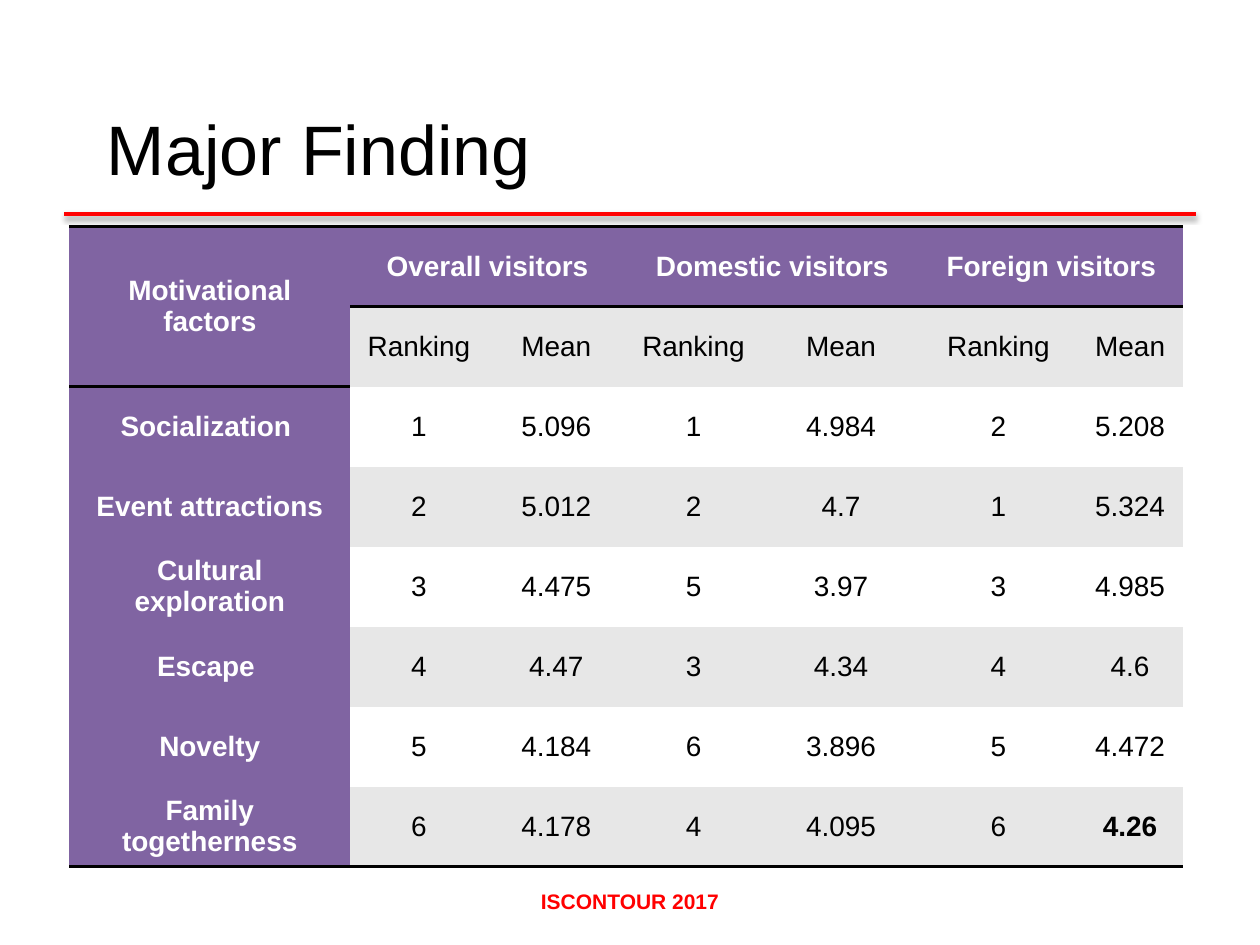
from lxml.etree import SubElement
from pptx import Presentation
from pptx.dml.color import RGBColor
from pptx.enum.shapes import MSO_CONNECTOR
from pptx.enum.text import MSO_ANCHOR, PP_ALIGN
from pptx.oxml.ns import qn
from pptx.util import Inches, Pt

TITLE = "Major Finding"
FOOTER = "ISCONTOUR 2017"
CORNER = "Motivational factors"
GROUPS = ["Overall visitors", "Domestic visitors", "Foreign visitors"]
MEASURES = ["Ranking", "Mean"]
FACTORS = [
    ("Socialization ", "1", "5.096", "1", "4.984", "2", "5.208"),
    ("Event attractions", "2", "5.012", "2", "4.7", "1", "5.324"),
    ("Cultural exploration", "3", "4.475", "5", "3.97", "3", "4.985"),
    ("Escape ", "4", "4.47", "3", "4.34", "4", "4.6"),
    ("Novelty", "5", "4.184", "6", "3.896", "5", "4.472"),
    ("Family togetherness", "6", "4.178", "4", "4.095", "6", "4.26"),
]
COLUMN_WIDTHS = [2.23, 1.09, 1.09, 1.09, 1.25, 1.25, 0.84]
TABLE_HEIGHT = 5.08
PURPLE, GREY, WHITE, BLACK, RED = "8064A2", "E7E7E7", "FFFFFF", "000000", "FF0000"
PLAIN_TABLE_STYLE = "{2D5ABB26-0587-4C30-8999-92F81FD0307C}"


def color(value):
    return RGBColor.from_string(value)


def write(frame, text, size, ink, bold=False, align=PP_ALIGN.CENTER):
    paragraph = frame.paragraphs[0]
    paragraph.text = text
    paragraph.alignment = align
    font = paragraph.font
    font.name, font.size, font.bold = "Arial", Pt(size), bold
    font.color.rgb = color(ink)


def add_text(slide, box, text, size, ink, anchor=MSO_ANCHOR.TOP, **style):
    frame = slide.shapes.add_textbox(*map(Inches, box)).text_frame
    frame.word_wrap = True
    frame.vertical_anchor = anchor
    write(frame, text, size, ink, **style)


def add_solid(parent, value):
    fill = SubElement(parent, qn("a:solidFill"))
    return SubElement(fill, qn("a:srgbClr"), val=value)


def add_rule(slide):
    rule = slide.shapes.add_connector(
        MSO_CONNECTOR.STRAIGHT, Inches(0.51), Inches(1.7), Inches(9.49), Inches(1.7))
    rule.line.color.rgb = color(RED)
    rule.line.width = Pt(2)
    effects = SubElement(rule._element.spPr, qn("a:effectLst"))
    shadow = SubElement(effects, qn("a:outerShdw"), blurRad=str(Pt(3.1)),
                        dist=str(Pt(1.6)), dir="5400000", rotWithShape="0")
    tint = SubElement(shadow, qn("a:srgbClr"), val=BLACK)
    SubElement(tint, qn("a:alpha"), val="38000")


def add_border(cell, side):
    border = SubElement(cell._tc.get_or_add_tcPr(), qn(f"a:{side}"), w=str(Pt(2)))
    add_solid(border, BLACK)


def add_findings(slide):
    group_row = [CORNER] + [text for group in GROUPS for text in (group, "")]
    rows = [group_row, ["", *MEASURES * len(GROUPS)], *FACTORS]
    last_row, last_column = len(rows) - 1, len(COLUMN_WIDTHS) - 1
    table = slide.shapes.add_table(
        len(rows), len(COLUMN_WIDTHS), Inches(0.55), Inches(1.8),
        Inches(sum(COLUMN_WIDTHS)), Inches(TABLE_HEIGHT)).table
    table._tbl.tblPr.find(qn("a:tableStyleId")).text = PLAIN_TABLE_STYLE
    for column, width in zip(table.columns, COLUMN_WIDTHS):
        column.width = Inches(width)
    for r, values in enumerate(rows):
        table.rows[r].height = Inches(TABLE_HEIGHT / len(rows))
        for c, text in enumerate(values):
            cell = table.cell(r, c)
            header = r == 0 or c == 0
            if r == 0:
                add_border(cell, "lnT")
            if r in (0, last_row) or (r, c) == (1, 0):
                add_border(cell, "lnB")
            cell.fill.solid()
            cell.fill.fore_color.rgb = color(PURPLE if header else GREY if r % 2 else WHITE)
            cell.vertical_anchor = MSO_ANCHOR.MIDDLE
            cell.margin_left = cell.margin_right = Inches(0.07)
            cell.margin_top = cell.margin_bottom = 0
            if text:
                bold = header or (r, c) == (last_row, last_column)
                write(cell.text_frame, text, 16, WHITE if header else BLACK, bold)
    table.cell(0, 0).merge(table.cell(1, 0))
    for c in range(1, last_column, len(MEASURES)):
        table.cell(0, c).merge(table.cell(0, c + 1))


def main():
    deck = Presentation()
    deck.slide_width, deck.slide_height = Inches(10), Inches(7.5)
    slide = deck.slides.add_slide(deck.slide_layouts[6])
    add_rule(slide)
    add_text(slide, (3.19, 7, 3.62, 0.3), FOOTER, 12, RED, bold=True)
    add_text(slide, (0.75, 0.3, 8.5, 1.25), TITLE, 40, BLACK,
             anchor=MSO_ANCHOR.BOTTOM, align=PP_ALIGN.LEFT)
    add_findings(slide)
    deck.save("out.pptx")


if __name__ == "__main__":
    main()
